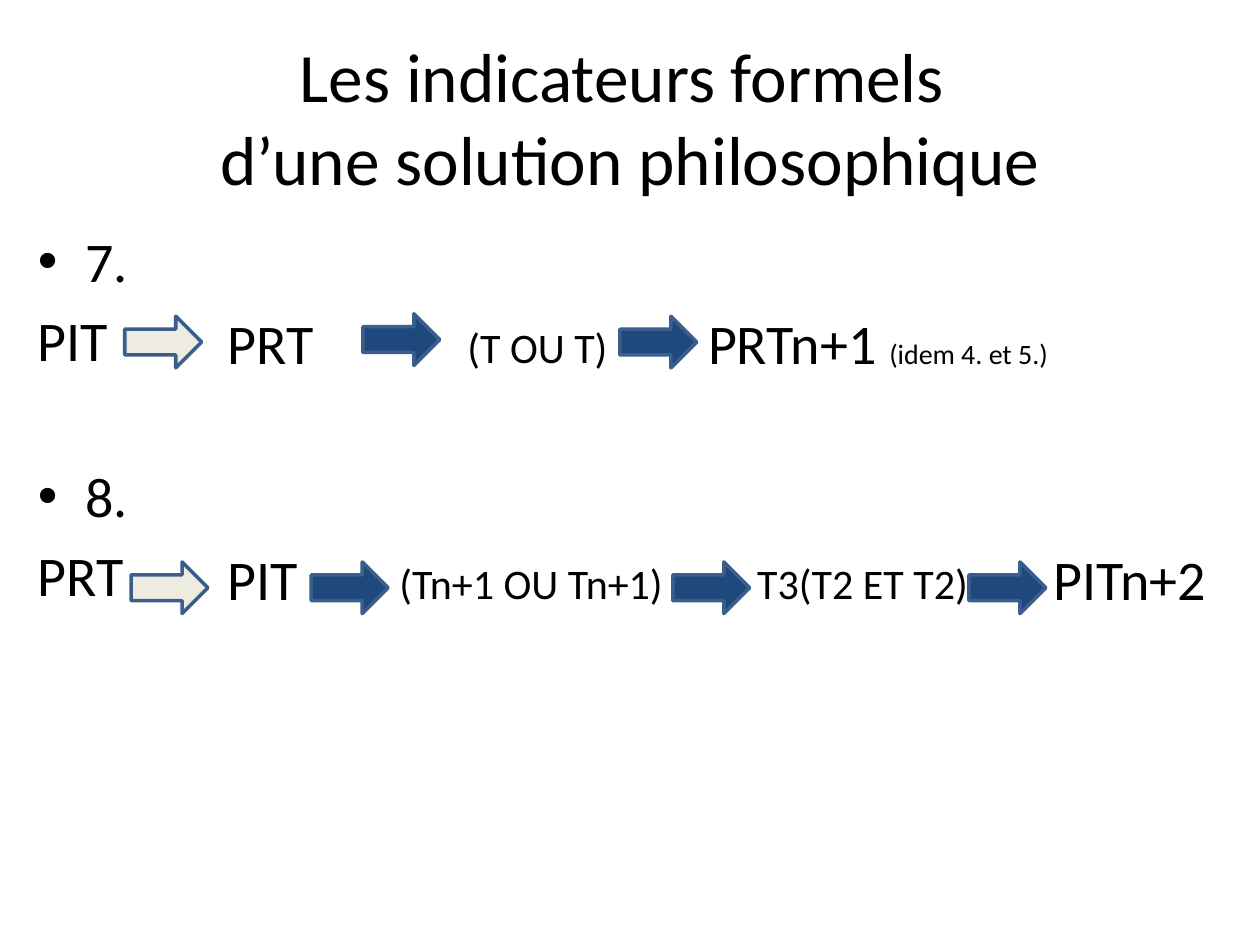
from lxml import etree
from pptx import Presentation
from pptx import util as u
from pptx.dml.color import RGBColor
from pptx.enum import shapes, text
from pptx.oxml.ns import qn

FONT = "Calibri"
BLACK, CREAM, NAVY, EDGE = "000000", "EEECE1", "1F497D", "3A5F8C"
ARROW_W, ARROW_H = 0.61, 0.41
ASCENT, LINE = 0.95, 1.22  # font metrics, in ems


def rgb(value):
    return RGBColor.from_string(value)


def add_run(p, content, size=32, color=BLACK):
    r = p.add_run()
    r.text = content
    r.font.name = FONT
    r.font.size = u.Pt(size)
    r.font.color.rgb = rgb(color)
    return r


def place(sp, left, top, width, height, anchor):
    sp.left, sp.top = u.Inches(left), u.Inches(top)
    sp.width, sp.height = u.Inches(width), u.Inches(height)
    tf = sp.text_frame
    tf.word_wrap = True
    tf.auto_size = text.MSO_AUTO_SIZE.NONE
    tf.vertical_anchor = anchor
    return tf


def add_title(s, lines):
    tf = place(s.shapes.title, 0.5, 0.3, 9, 1.25, text.MSO_ANCHOR.MIDDLE)
    p = tf.paragraphs[0]
    p.alignment = text.PP_ALIGN.CENTER
    for i, line in enumerate(lines):
        if i:
            p.add_line_break()
        add_run(p, line, size=39.6)


def add_plain_line(tf, content):
    """Add an unbulleted line at the left edge of the body."""
    p = tf.add_paragraph()
    add_run(p, content)
    pPr = p._p.get_or_add_pPr()
    pPr.set("marL", "0")
    pPr.set("indent", "0")
    etree.SubElement(pPr, qn("a:buNone"))


def add_term(s, left, baseline, width, parts):
    """Set one term of a formula on the given baseline."""
    size = max(pt for _, pt in parts)
    em = size / 72
    sp = s.shapes.add_textbox(0, 0, 0, 0)
    tf = place(sp, left, baseline - ASCENT * em, width, LINE * em,
               text.MSO_ANCHOR.TOP)
    tf.margin_left = tf.margin_right = tf.margin_top = tf.margin_bottom = 0
    for content, pt in parts:
        add_run(tf.paragraphs[0], content, size=pt)


def add_arrow(s, left, top, fill):
    sp = s.shapes.add_shape(shapes.MSO_SHAPE.RIGHT_ARROW, u.Inches(left),
                            u.Inches(top), u.Inches(ARROW_W), u.Inches(ARROW_H))
    sp.shadow.inherit = False
    sp.fill.solid()
    sp.fill.fore_color.rgb = rgb(fill)
    sp.line.color.rgb = rgb(EDGE)
    sp.line.width = u.Pt(2)


def main():
    prs = Presentation()
    prs.slide_width, prs.slide_height = u.Inches(10), u.Inches(7.5)
    s = prs.slides.add_slide(prs.slide_layouts[1])

    add_title(s, ["Les indicateurs formels ", "d’une solution philosophique"])

    # Numbered points, each with the first term of its formula
    tf = place(s.placeholders[1], 0.2, 1.75, 9.76, 4.95, text.MSO_ANCHOR.TOP)
    add_run(tf.paragraphs[0], "7.")
    add_plain_line(tf, "PIT")
    p = tf.add_paragraph()
    p.space_before = u.Pt(51)
    add_run(p, "8.")
    add_plain_line(tf, "PRT")

    # Following terms: baseline, then left, width and text of each
    formulas = [
        (2.87, [(1.81, 0.8, [("PRT", 32)]),
                (3.71, 1.2, [("(T OU T)", 24)]),
                (5.62, 2.8, [("PRTn+1 ", 32), ("(idem 4. et 5.)", 16)])]),
        (4.74, [(1.81, 0.8, [("PIT", 32)]),
                (3.17, 2.2, [("(Tn+1 OU Tn+1)", 24)]),
                (6.01, 1.8, [("T3(T2 ET T2)", 24)]),
                (8.36, 1.4, [("PITn+2", 32)])]),
    ]
    for baseline, terms in formulas:
        for left, width, parts in terms:
            add_term(s, left, baseline, width, parts)

    # Arrows between the terms
    for left, top, fill in [(0.99, 2.51, CREAM), (2.88, 2.49, NAVY),
                            (4.92, 2.51, NAVY), (1.04, 4.46, CREAM),
                            (2.47, 4.46, NAVY), (5.34, 4.46, NAVY),
                            (7.69, 4.46, NAVY)]:
        add_arrow(s, left, top, fill)

    prs.save("out.pptx")


if __name__ == "__main__":
    main()
